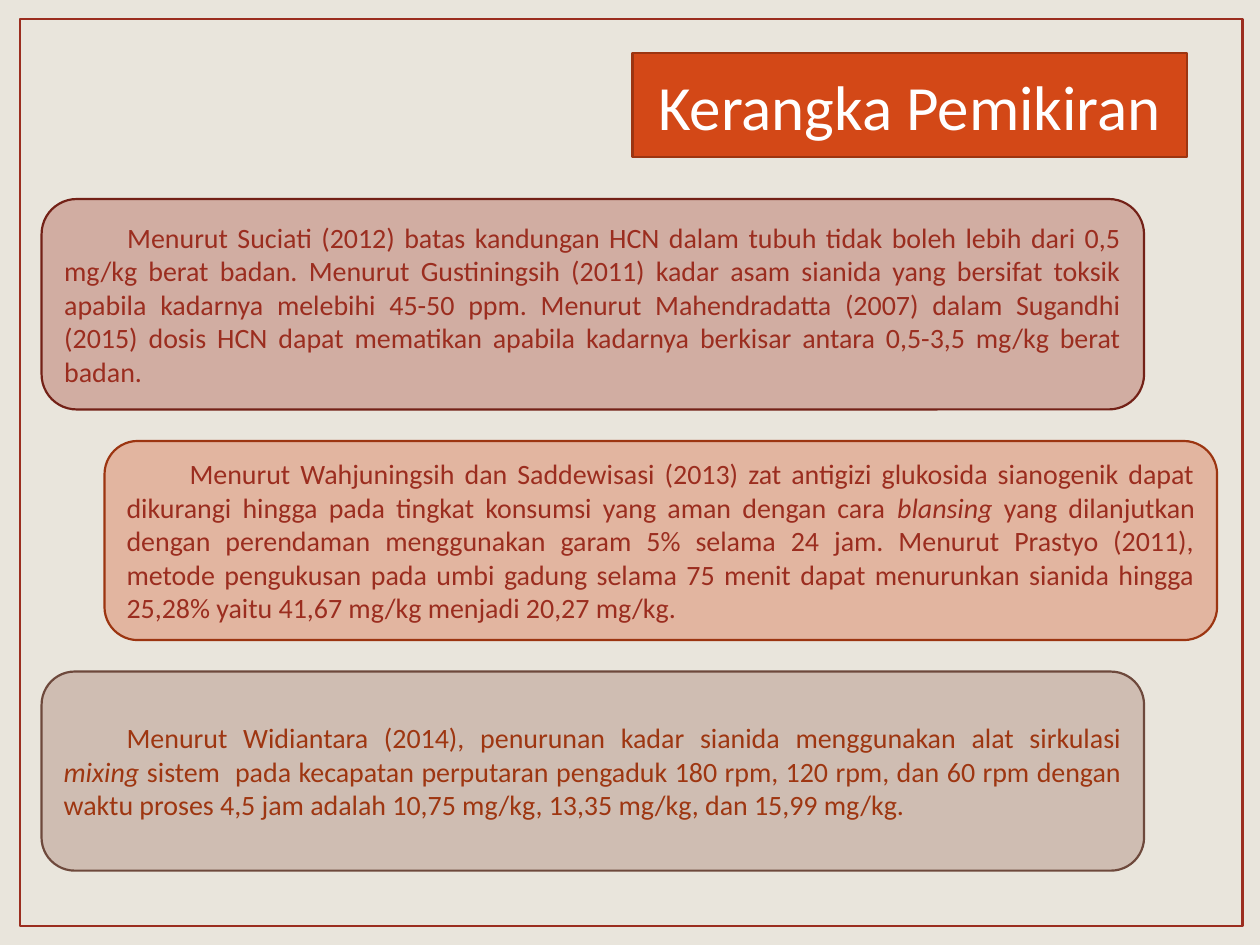
from dataclasses import dataclass

from lxml import etree
from pptx import Presentation
from pptx import util as u
from pptx.dml.color import RGBColor
from pptx.enum import shapes, text
from pptx.oxml import ns

SCALE = 9144
FONT = "Calibri"
HUES = {
    "back": "E9E5DC",
    "white": "FFFFFF",
    "red": "9B2D1F",
    "wine": "732117",
    "orange": "D34817",
    "rust": "9C3511",
    "brown": "956251",
    "umber": "6E493C",
    "brick": "9E3611",
}


@dataclass
class Card:
    left: int
    top: int
    width: int
    height: int
    fill: str
    line: str
    ink: str
    words: list[str]
    slant: str = ""


CARDS = [
    Card(33, 158, 875, 167, "red", "wine", "red", [
        "Menurut Suciati (2012) batas kandungan HCN dalam tubuh tidak boleh lebih "
        "dari 0,5 mg/kg berat badan. Menurut Gustiningsih (2011) kadar asam sianida "
        "yang bersifat toksik apabila kadarnya melebihi 45-50 ppm. Menurut "
        "Mahendradatta (2007) dalam Sugandhi (2015) dosis HCN dapat mematikan "
        "apabila kadarnya berkisar antara 0,5-3,5 mg/kg berat badan.",
    ]),
    Card(83, 350, 883, 158, "orange", "rust", "red", [
        "Menurut Wahjuningsih dan Saddewisasi (2013) zat antigizi glukosida "
        "sianogenik dapat dikurangi hingga pada tingkat konsumsi yang aman dengan "
        "cara ",
        "blansing ",
        "yang dilanjutkan dengan perendaman menggunakan garam 5% selama 24 jam. "
        "Menurut Prastyo (2011), metode pengukusan pada umbi gadung selama 75 menit "
        "dapat menurunkan sianida hingga 25,28% yaitu 41,67 mg/kg menjadi "
        "20,27 mg/kg.",
    ], "blansing "),
    Card(33, 533, 875, 158, "brown", "umber", "brick", [
        "Menurut Widiantara (2014), penurunan kadar sianida menggunakan alat "
        "sirkulasi ",
        "mixing ",
        "sistem  pada kecapatan perputaran pengaduk 180 rpm, 120 rpm, dan 60 rpm "
        "dengan waktu proses 4,5 jam adalah 10,75 mg/kg, 13,35 mg/kg, dan "
        "15,99 mg/kg.",
    ], "mixing "),
]


def px(count: int) -> int:
    return u.Emu(count * SCALE)


def hue(name: str) -> RGBColor:
    return RGBColor.from_string(HUES[name])


def draw_box(slide, kind, left: int, top: int, width: int, height: int,
             line: str, weight: float, fill: str = ""):
    box = slide.shapes.add_shape(kind, px(left), px(top), px(width), px(height))
    box.shadow.inherit = False
    if fill:
        box.fill.solid()
        box.fill.fore_color.rgb = hue(fill)
    else:
        box.fill.background()
    box.line.color.rgb = hue(line)
    box.line.width = u.Pt(weight)
    return box


def fade(box, share: int) -> None:
    tint = box.element.spPr.find(ns.qn("a:solidFill"))[0]
    etree.SubElement(tint, ns.qn("a:alpha")).set("val", str(share * 1000))


def style(run, size: int, ink: str) -> None:
    run.font.name = FONT
    run.font.size = u.Pt(size)
    run.font.color.rgb = hue(ink)


def draw_title(slide) -> None:
    box = draw_box(slide, shapes.MSO_SHAPE.RECTANGLE, 502, 42, 440, 83,
                   "rust", 1.25, "orange")
    frame = box.text_frame
    frame.text = "Kerangka Pemikiran"
    frame.word_wrap = True
    frame.vertical_anchor = text.MSO_ANCHOR.MIDDLE
    para = frame.paragraphs[0]
    para.alignment = text.PP_ALIGN.CENTER
    style(para.runs[0], 36, "white")


def draw_card(slide, card: Card) -> None:
    box = draw_box(slide, shapes.MSO_SHAPE.ROUNDED_RECTANGLE, card.left, card.top,
                   card.width, card.height, card.line, 1.25, card.fill)
    fade(box, 30)
    frame = box.text_frame
    frame.word_wrap = True
    frame.vertical_anchor = text.MSO_ANCHOR.MIDDLE
    para = frame.paragraphs[0]
    para.alignment = text.PP_ALIGN.JUSTIFY
    para._p.get_or_add_pPr().set("indent", str(px(50)))
    for piece in card.words:
        run = para.add_run()
        run.text = piece
        style(run, 16, card.ink)
        run.font.italic = piece == card.slant


def main() -> None:
    deck = Presentation()
    deck.slide_width, deck.slide_height = px(1000), px(750)
    slide = deck.slides.add_slide(deck.slide_layouts[6])
    slide.background.fill.solid()
    slide.background.fill.fore_color.rgb = hue("back")
    draw_box(slide, shapes.MSO_SHAPE.RECTANGLE, 16, 15, 970, 720, "red", 1.5)
    draw_title(slide)
    for card in CARDS:
        draw_card(slide, card)
    deck.save("out.pptx")


if __name__ == "__main__":
    main()
